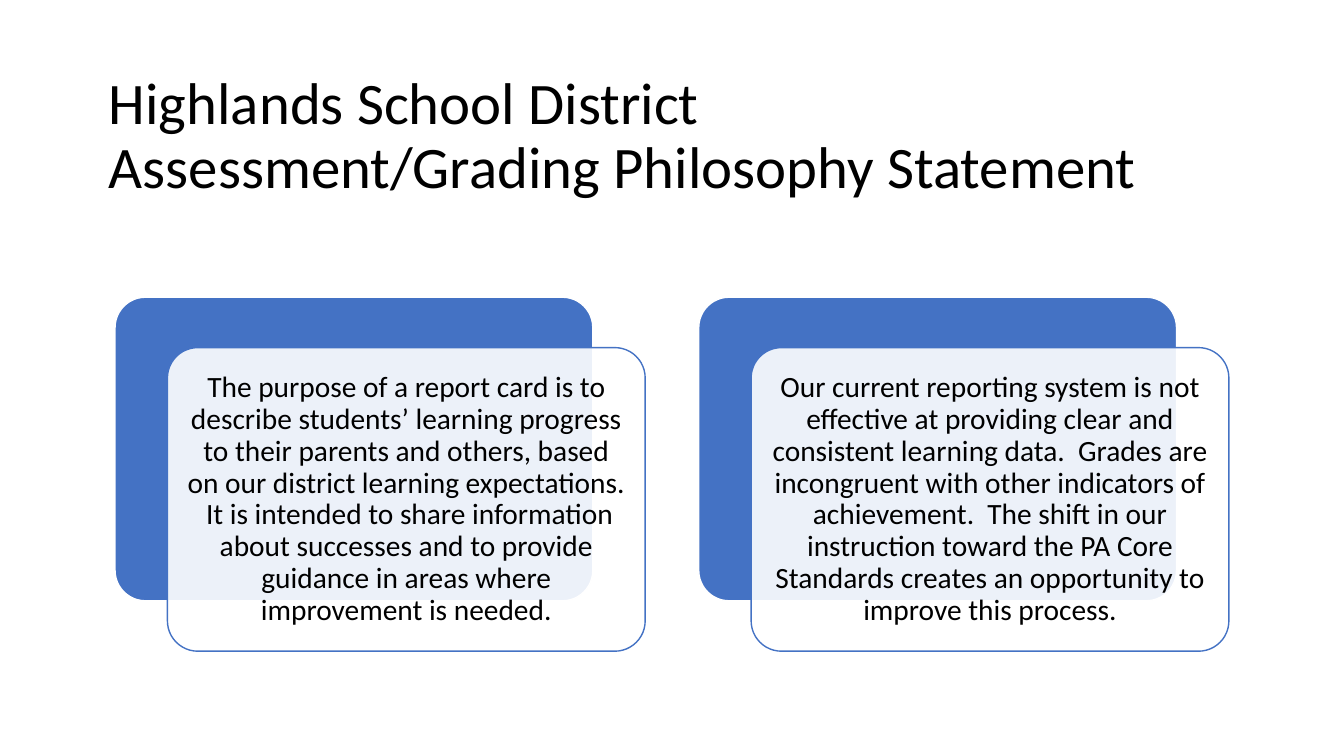
from lxml.etree import SubElement
from pptx import Presentation
from pptx.dml.color import RGBColor
from pptx.enum.shapes import MSO_SHAPE
from pptx.enum.text import MSO_ANCHOR, PP_ALIGN
from pptx.oxml.ns import qn
from pptx.util import Cm, Pt

TITLE = "Highlands School District\vAssessment/Grading Philosophy Statement"
STATEMENTS = [
    "The purpose of a report card is to describe students’ learning progress to their "
    "parents and others, based on our district learning expectations.  It is intended to "
    "share information about successes and to provide guidance in areas where "
    "improvement is needed.",
    "Our current reporting system is not effective at providing clear and consistent "
    "learning data.  Grades are incongruent with other indicators of achievement.  The "
    "shift in our instruction toward the PA Core Standards creates an opportunity to "
    "improve this process.",
]

FONT = "Calibri"
BLUE = RGBColor(0x44, 0x72, 0xC4)
WHITE = RGBColor(0xFF, 0xFF, 0xFF)
BLACK = RGBColor(0, 0, 0)

CARD_LEFT, CARD_TOP = Cm(2.9), Cm(7.49)
CARD_WIDTH, CARD_HEIGHT = Cm(12.04), Cm(7.65)
CARD_PITCH = Cm(14.71)
FRONT_RIGHT, FRONT_DOWN = Cm(1.32), Cm(1.27)
CARD_INSET = Cm(0.23)


def write_text(shape, text, size, align):
    frame = shape.text_frame
    frame.word_wrap = True
    frame.vertical_anchor = MSO_ANCHOR.MIDDLE
    frame.text = text
    for para in frame.paragraphs:
        para.alignment = align
        para.line_spacing = 0.9
        for span in para.runs:
            span.font.name = FONT
            span.font.size = Pt(size)
            span.font.color.rgb = BLACK


def add_card(page, left, top, fill, line):
    card = page.shapes.add_shape(
        MSO_SHAPE.ROUNDED_RECTANGLE, left, top, CARD_WIDTH, CARD_HEIGHT)
    card.adjustments[0] = 0.1
    card.shadow.inherit = False
    card.fill.solid()
    card.fill.fore_color.rgb = fill
    card.line.color.rgb = line
    card.line.width = Pt(1)
    return card


def set_opacity(shape, percent):
    color = shape.fill._xPr.find(qn("a:solidFill"))[0]
    SubElement(color, qn("a:alpha")).set("val", str(percent * 1000))


def add_statement(page, left, text):
    """Add a blue card with a translucent text card shifted in front of it."""
    add_card(page, left, CARD_TOP, BLUE, WHITE)
    front = add_card(page, left + FRONT_RIGHT, CARD_TOP + FRONT_DOWN, WHITE, BLUE)
    set_opacity(front, 90)
    frame = front.text_frame
    frame.margin_left = frame.margin_right = CARD_INSET
    frame.margin_top = frame.margin_bottom = CARD_INSET
    write_text(front, text, 21, PP_ALIGN.CENTER)


def main():
    deck = Presentation()
    deck.slide_width, deck.slide_height = Cm(33.87), Cm(19.05)
    page = deck.slides.add_slide(deck.slide_layouts[5])

    title = page.shapes.title
    title.left, title.top = Cm(2.49), Cm(1.3)
    title.width, title.height = Cm(28.27), Cm(4.32)
    write_text(title, TITLE, 42, PP_ALIGN.LEFT)

    for index, statement in enumerate(STATEMENTS):
        add_statement(page, CARD_LEFT + index * CARD_PITCH, statement)

    deck.save("out.pptx")


if __name__ == "__main__":
    main()
